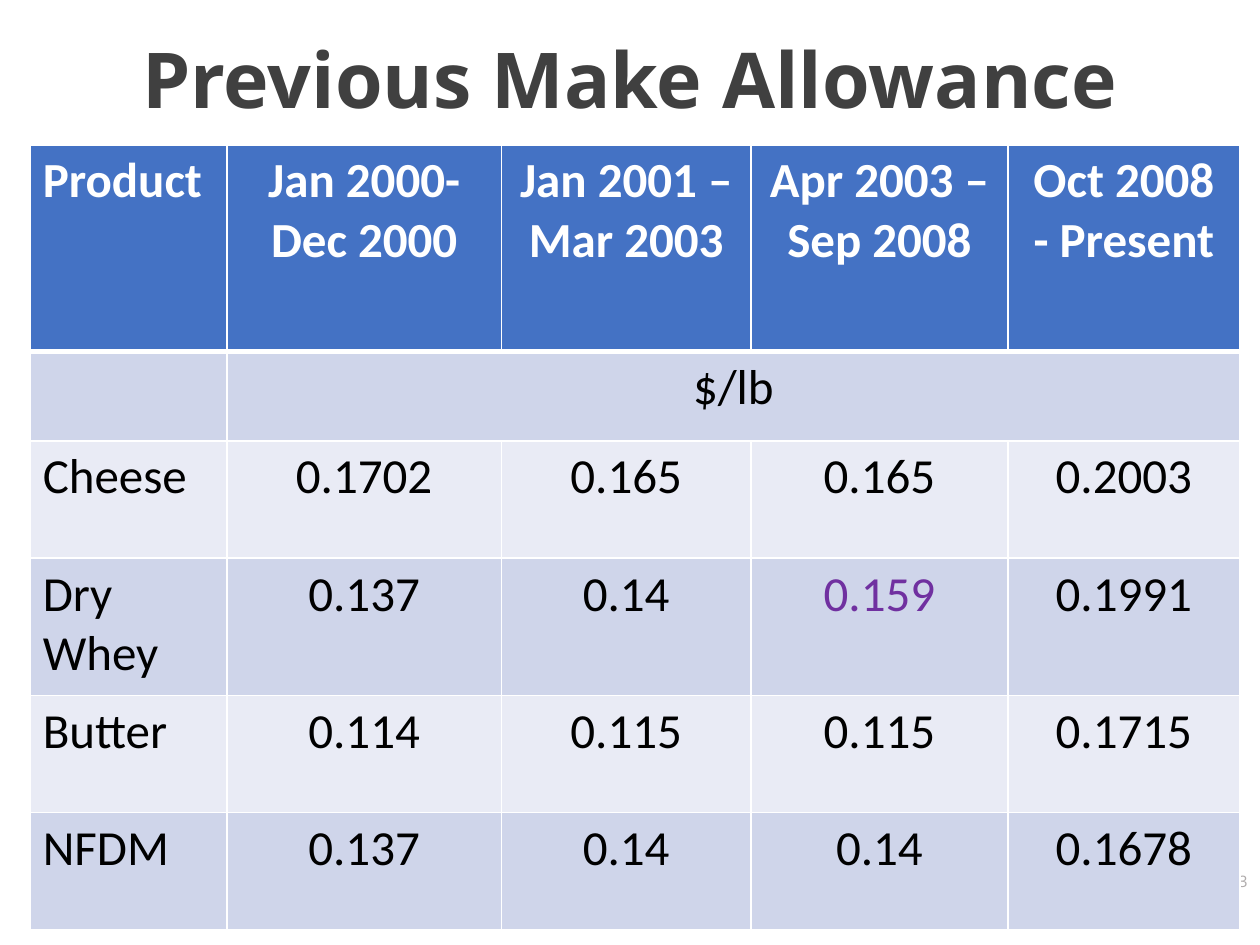
from lxml import etree
from pptx import Presentation
from pptx.dml.color import RGBColor
from pptx.enum.text import MSO_ANCHOR, PP_ALIGN
from pptx.oxml.ns import qn
from pptx.util import Inches, Pt

TOP = MSO_ANCHOR.TOP
LEFT, CENTER, RIGHT = PP_ALIGN.LEFT, PP_ALIGN.CENTER, PP_ALIGN.RIGHT

WHITE, BLACK, PURPLE = "FFFFFF", "000000", "7030A0"
HEADER_FILL, BAND_FILLS = "4472C4", ("CFD5EA", "E9EBF5")

COLUMN_WIDTHS = (1.56, 2.18, 1.98, 2.04, 1.84)
ROW_HEIGHTS = (1.64, 0.71, 0.93, 1.09, 0.93, 0.93)
ALLOWANCES = (
    ("Product", "Jan 2000- Dec 2000", "Jan 2001 – Mar 2003",
     "Apr 2003 – Sep 2008", "Oct 2008 - Present"),
    ("", "$/lb", "", "", ""),
    ("Cheese", "0.1702", "0.165", "0.165", "0.2003"),
    ("Dry Whey", "0.137", "0.14", "0.159", "0.1991"),
    ("Butter", "0.114", "0.115", "0.115", "0.1715"),
    ("NFDM", "0.137", "0.14", "0.14", "0.1678"),
)
UNIT_ROW = 1
HIGHLIGHT = (3, 3)


def rgb(value):
    return RGBColor.from_string(value)


def add_text(paragraph, text, font, size, color, bold=False, align=LEFT):
    paragraph.alignment = align
    run = paragraph.add_run()
    run.text = text
    run.font.name = font
    run.font.size = Pt(size)
    run.font.bold = bold
    run.font.color.rgb = rgb(color)


def place(shape, box):
    shape.left, shape.top, shape.width, shape.height = (Inches(v) for v in box)


def set_title(slide, box):
    title = slide.shapes.title
    place(title, box)
    frame = title.text_frame
    frame.word_wrap = True
    frame.vertical_anchor = TOP
    heading = frame.paragraphs[0]
    heading.line_spacing = 0.9
    add_text(heading, "Previous Make Allowance", "Open Sans", 44, "404040",
             True, CENTER)


def add_page_number(slide, box):
    number = slide.shapes.add_textbox(*(Inches(v) for v in box))
    number.text_frame.word_wrap = True
    add_text(number.text_frame.paragraphs[0], "33", "Open Sans", 9, "AFABAB",
             align=RIGHT)


def set_borders(cell, bottom_width, top_width):
    properties = cell._tc.get_or_add_tcPr()
    for side, width in (("L", 1), ("R", 1), ("T", top_width), ("B", bottom_width)):
        line = etree.SubElement(properties, qn(f"a:ln{side}"), w=str(Pt(width)))
        fill = etree.SubElement(line, qn("a:solidFill"))
        etree.SubElement(fill, qn("a:srgbClr"), val=WHITE)


def add_allowance_table(slide, box):
    frame = slide.shapes.add_table(len(ROW_HEIGHTS), len(COLUMN_WIDTHS),
                                   *(Inches(v) for v in box))
    table = frame.table
    for column, width in zip(table.columns, COLUMN_WIDTHS):
        column.width = Inches(width)
    for row, height in zip(table.rows, ROW_HEIGHTS):
        row.height = Inches(height)

    for r, values in enumerate(ALLOWANCES):
        header = r == 0
        for c, value in enumerate(values):
            cell = table.cell(r, c)
            set_borders(cell, 3 if header else 1, 3 if r == 1 else 1)
            cell.fill.solid()
            cell.fill.fore_color.rgb = rgb(
                HEADER_FILL if header else BAND_FILLS[(r - 1) % 2])
            if value:
                color = WHITE if header else PURPLE if (r, c) == HIGHLIGHT else BLACK
                add_text(cell.text_frame.paragraphs[0], value, "Calibri", 28,
                         color, header, CENTER if c else LEFT)
    table.cell(UNIT_ROW, 1).merge(table.cell(UNIT_ROW, len(COLUMN_WIDTHS) - 1))


def main():
    deck = Presentation()
    deck.slide_width, deck.slide_height = Inches(10), Inches(7.5)
    slide = deck.slides.add_slide(deck.slide_layouts[5])
    set_title(slide, (0.51, 0.28, 8.98, 1.25))
    add_page_number(slide, (9.6, 6.87, 0.4, 0.4))
    add_allowance_table(slide, (0.24, 1.15, 9.59, 6.22))
    deck.save("out.pptx")


if __name__ == "__main__":
    main()
